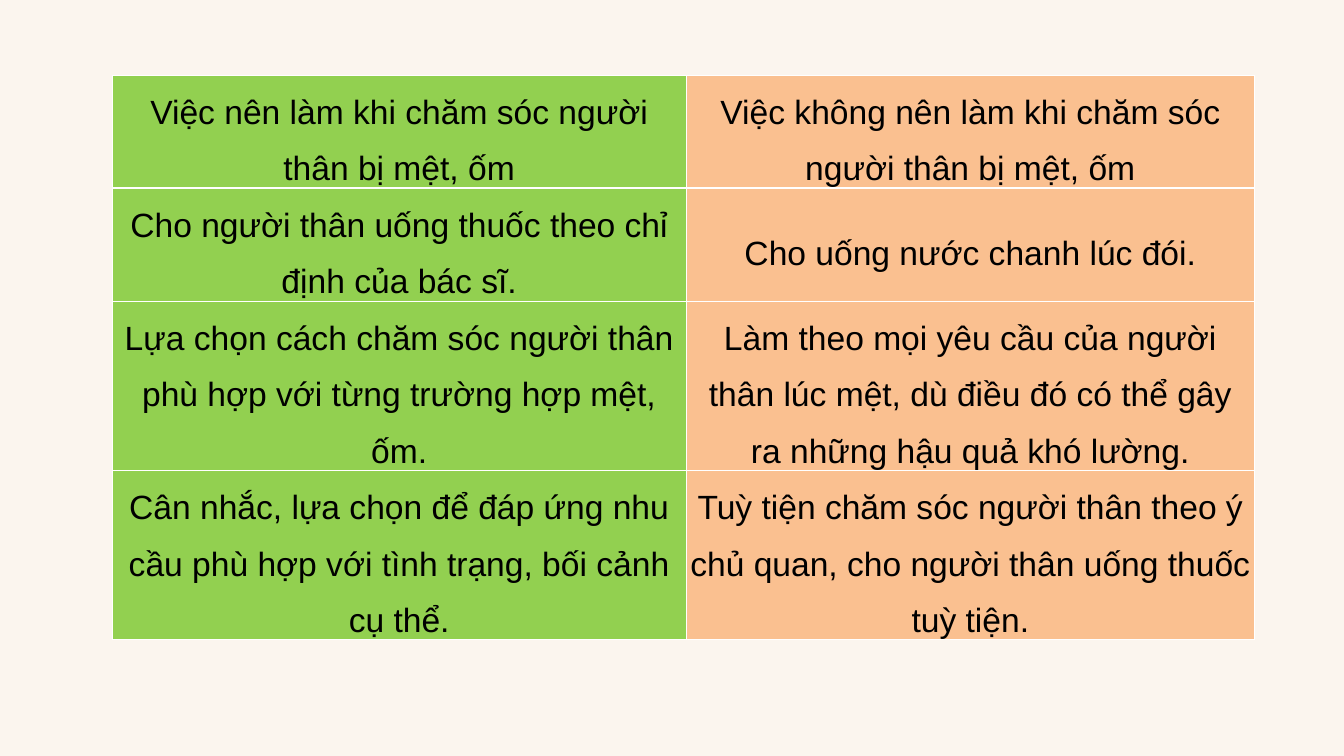
from dataclasses import dataclass

from lxml.etree import SubElement
from pptx import Presentation
from pptx.dml.color import RGBColor as Rgb
from pptx.enum.text import MSO_ANCHOR as Anchor, PP_ALIGN as Align
from pptx.oxml.ns import qn
from pptx.table import _Cell as Cell
from pptx.util import Inches, Pt


@dataclass(frozen=True)
class Theme:
    back: str = "FBF5EE"
    ink: str = "000000"
    line: str = "FFFFFF"
    do: str = "92D050"
    dont: str = "FAC090"
    font: str = "Arial"
    size: int = 36
    thin: int = 1
    thick: int = 3


@dataclass(frozen=True)
class Advice:
    do: str
    dont: str
    height: float = 1.45


THEME = Theme()
WIDTHS = (8.54, 8.46)
ROWS = (
    Advice("Việc nên làm khi chăm sóc người thân bị mệt, ốm",
           "Việc không nên làm khi chăm sóc người thân bị mệt, ốm", 1.61),
    Advice("Cho người thân uống thuốc theo chỉ định của bác sĩ.",
           "Cho uống nước chanh lúc đói."),
    Advice("Lựa chọn cách chăm sóc người thân phù hợp với từng trường hợp mệt, ốm.",
           "Làm theo mọi yêu cầu của người thân lúc mệt, dù điều đó có thể gây ra "
           "những hậu quả khó lường."),
    Advice("Cân nhắc, lựa chọn để đáp ứng nhu cầu phù hợp với tình trạng, bối cảnh cụ thể.",
           "Tuỳ tiện chăm sóc người thân theo ý chủ quan, cho người thân uống thuốc "
           "tuỳ tiện."),
)


def add_edges(cell: Cell, top: int, bottom: int) -> None:
    """Draw the four borders; call before the fill is set."""
    props = cell._tc.get_or_add_tcPr()
    edges = {"L": THEME.thin, "R": THEME.thin, "T": top, "B": bottom}
    for side, width in edges.items():
        line = SubElement(props, qn(f"a:ln{side}"), w=str(Pt(width)))
        fill = SubElement(line, qn("a:solidFill"))
        SubElement(fill, qn("a:srgbClr"), val=THEME.line)


def fill_cell(cell: Cell, text: str, color: str) -> None:
    cell.fill.solid()
    cell.fill.fore_color.rgb = Rgb.from_string(color)
    cell.vertical_anchor = Anchor.MIDDLE
    cell.margin_left = cell.margin_right = Inches(0.05)
    cell.margin_top = cell.margin_bottom = 0
    cell.text = text
    para = cell.text_frame.paragraphs[0]
    para.alignment = Align.CENTER
    para.line_spacing = 1.5
    font = para.font
    font.name, font.size, font.bold = THEME.font, Pt(THEME.size), False
    font.color.rgb = Rgb.from_string(THEME.ink)


def main() -> None:
    deck = Presentation()
    deck.slide_width, deck.slide_height = Inches(20), Inches(11.25)
    slide = deck.slides.add_slide(deck.slide_layouts[6])
    back = slide.background.fill
    back.solid()
    back.fore_color.rgb = Rgb.from_string(THEME.back)

    high = sum(row.height for row in ROWS)
    table = slide.shapes.add_table(
        len(ROWS), len(WIDTHS), Inches(1.67), Inches(1.12),
        Inches(sum(WIDTHS)), Inches(high)).table
    table.horz_banding = False
    for col, width in zip(table.columns, WIDTHS):
        col.width = Inches(width)
    for i, row in enumerate(ROWS):
        table.rows[i].height = Inches(row.height)
        top = THEME.thick if i == 1 else THEME.thin
        bottom = THEME.thick if i == 0 else THEME.thin
        pairs = ((row.do, THEME.do), (row.dont, THEME.dont))
        for j, (text, color) in enumerate(pairs):
            cell = table.cell(i, j)
            add_edges(cell, top, bottom)
            fill_cell(cell, text, color)

    deck.save("out.pptx")


if __name__ == "__main__":
    main()
